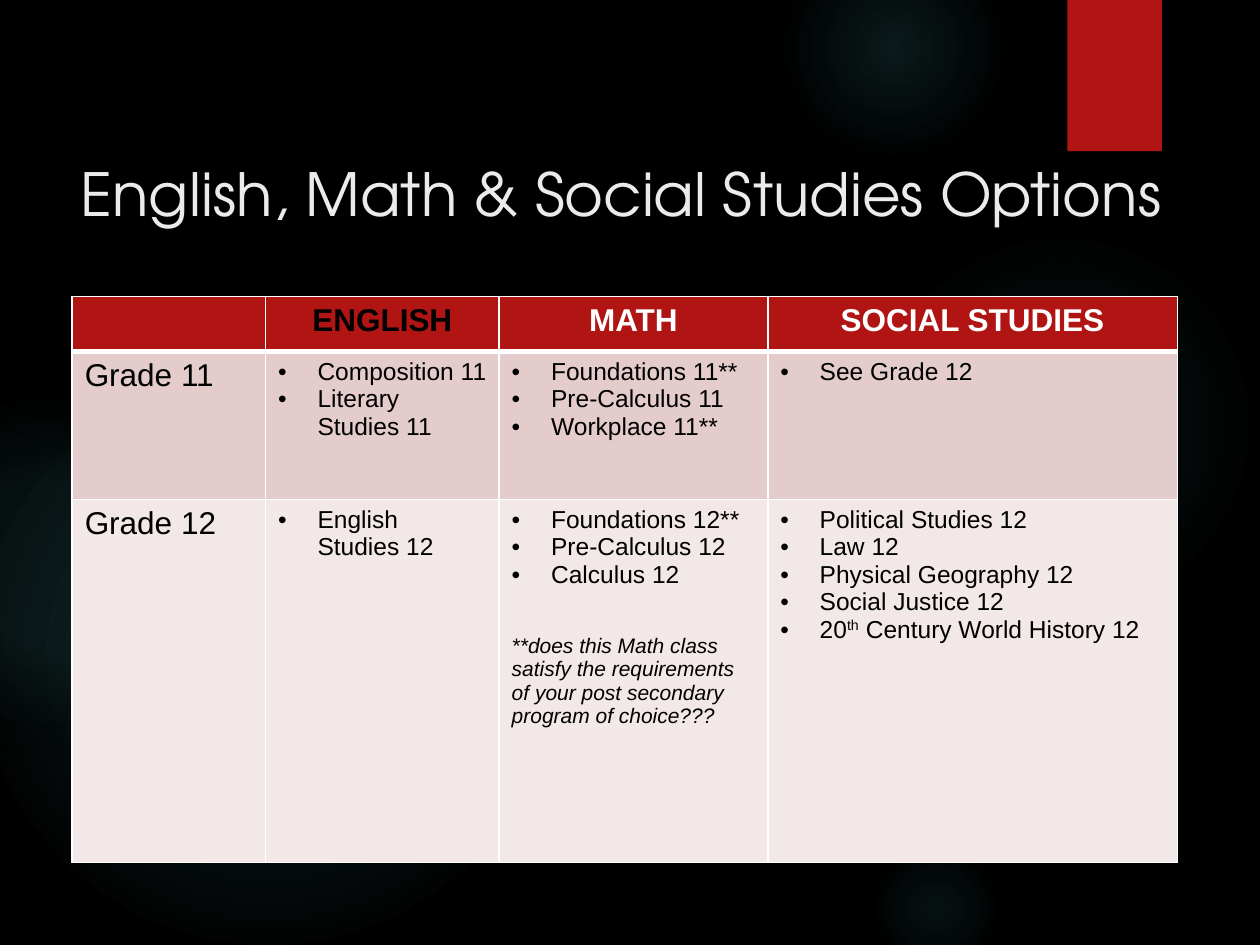
from pptx import Presentation
from pptx.dml.color import RGBColor as RGB
from pptx.enum.shapes import MSO_SHAPE as Kind
from pptx.enum.text import MSO_ANCHOR as Anchor, MSO_AUTO_SIZE as Auto, PP_ALIGN as Align
from pptx.oxml import parse_xml
from pptx.util import Pt
from lxml.etree import SubElement as Sub

BLACK, WHITE = RGB(0, 0, 0), RGB(255, 255, 255)
RED, TEAL = RGB(0xB0, 0x15, 0x13), RGB(0x50, 0xB9, 0xC1)
PALE = RGB(0xEB, 0xEB, 0xEB)
ROSE, BLUSH = RGB(0xE4, 0xCC, 0xCC), RGB(0xF2, 0xE8, 0xE7)
NS = "http://schemas.openxmlformats.org/drawingml/2006/main"
A = "{%s}" % NS

HEAD = dict(size=Pt(18), bold=True, italic=False)
GRADE = dict(size=Pt(18), bold=False, italic=False)
ITEM = dict(size=Pt(14), bold=False, italic=False)
NOTE = dict(size=Pt(12), bold=False, italic=True)

# left, top, diameter, then the stops as (position, opacity) in percent
GLOWS = [
    (496, 132, 222, [(0, 7), (36, 6), (69, 0)]),
    (448, -36, 126, [(0, 14), (36, 7), (73, 0)]),
    (496, 480, 78, [(0, 9), (36, 5), (66, 0)]),
    (-12, 210, 330, [(0, 11), (36, 10), (75, 0)]),
    (-66, 228, 186, [(0, 8), (36, 8), (72, 0)]),
]
COLS = [110.5, 133.5, 153.5, 234]
ROWS = [31.5, 84.5, 207.5]
HEADS = [("ENGLISH", BLACK), ("MATH", WHITE), ("SOCIAL STUDIES", WHITE)]
# Superscripts stand between carets
GRADES = [
    ("Grade 11", ROSE, [
        ["Composition 11", "Literary Studies 11"],
        ["Foundations 11**", "Pre-Calculus 11", "Workplace 11**"],
        ["See Grade 12"]]),
    ("Grade 12", BLUSH, [
        ["English Studies 12"],
        ["Foundations 12**", "Pre-Calculus 12", "Calculus 12"],
        ["Political Studies 12", "Law 12", "Physical Geography 12",
         "Social Justice 12", "20^th^ Century World History 12"]]),
]
ASK = ("**does this Math class satisfy the requirements "
       "of your post secondary program of choice???")


class Deck:
    """Holds the style and the current slide."""
    font = "Arial"
    face = "TeX Gyre Adventor"

    def __init__(self):
        self.prs = Presentation()
        self.prs.slide_width, self.prs.slide_height = Pt(720), Pt(540)
        self.slide = self.prs.slides.add_slide(self.prs.slide_layouts[5])
        back = self.slide.background.fill
        back.solid()
        back.fore_color.rgb = BLACK

    def shape(self, kind, box, fill):
        shp = self.slide.shapes.add_shape(kind, *map(Pt, box))
        shp.shadow.inherit = False
        shp.line.fill.background()
        shp.fill.solid()
        shp.fill.fore_color.rgb = fill
        return shp

    def glow(self, left, top, size, stops):
        """Add a disc that fades out from its centre."""
        shp = self.shape(Kind.OVAL, (left, top, size, size), TEAL)
        marks = "".join(
            f'<a:gs pos="{pos * 1000}"><a:srgbClr val="{TEAL}">'
            f'<a:alpha val="{part * 1000}"/></a:srgbClr></a:gs>'
            for pos, part in stops)
        grad = parse_xml(
            f'<a:gradFill xmlns:a="{NS}"><a:gsLst>{marks}</a:gsLst>'
            '<a:path path="circle"><a:fillToRect l="50000" t="50000" '
            'r="50000" b="50000"/></a:path></a:gradFill>')
        props = shp._element.spPr
        props.replace(props.find(A + "solidFill"), grad)

    def title(self, text, box):
        shp = self.slide.shapes.title
        shp.left, shp.top, shp.width, shp.height = map(Pt, box)
        shp._element.getparent().append(shp._element)
        frame = shp.text_frame
        frame.auto_size, frame.word_wrap = Auto.NONE, True
        frame.vertical_anchor, frame.margin_top = Anchor.TOP, Pt(46)
        par = frame.paragraphs[0]
        par.alignment = Align.LEFT
        self.text(par, text, PALE, dict(size=Pt(34), name=self.face))

    def text(self, par, text, color, style):
        for num, part in enumerate(text.split("^")):
            run = par.add_run()
            run.text = part
            run.font.name = self.font
            run.font.color.rgb = color
            for key, val in style.items():
                setattr(run.font, key, val)
            if num % 2:
                run.font._element.set("baseline", "30000")

    def table(self, left, top, cols, rows):
        frame = self.slide.shapes.add_table(
            len(rows), len(cols), Pt(left), Pt(top), Pt(sum(cols)), Pt(sum(rows)))
        grid = frame.table
        for col, wide in zip(grid.columns, cols):
            col.width = Pt(wide)
        for row, high in zip(grid.rows, rows):
            row.height = Pt(high)
        return grid

    def cell(self, cell, fill, top=1, low=1):
        """Fill a cell and rule it in white; top and low are line widths."""
        cell.fill.solid()
        cell.fill.fore_color.rgb = fill
        props = cell._tc.get_or_add_tcPr()
        for pos, (side, wide) in enumerate(zip("LRTB", (1, 1, top, low))):
            line = Sub(props, A + "ln" + side, w=str(Pt(wide)))
            Sub(Sub(line, A + "solidFill"), A + "srgbClr", val=str(WHITE))
            props.insert(pos, line)

    def items(self, cell, lines):
        frame = cell.text_frame
        for num, text in enumerate(lines):
            par = frame.add_paragraph() if num else frame.paragraphs[0]
            props = par._p.get_or_add_pPr()
            for key, val in dict(marL=Pt(22.5), indent=Pt(-22.5)).items():
                props.set(key, str(val))
            Sub(props, A + "buFont", typeface=self.font)
            Sub(props, A + "buChar", char="•")
            self.text(par, text, BLACK, ITEM)


def main():
    deck = Deck()
    for glow in GLOWS:
        deck.glow(*glow)
    deck.shape(Kind.RECTANGLE, (610, 0, 54, 86.4), RED)
    deck.title("English, Math & Social Studies Options", (39, 44, 657, 68))

    grid = deck.table(41.25, 169.5, COLS, ROWS)
    for col in range(len(COLS)):
        deck.cell(grid.cell(0, col), RED, low=3)
    for col, (text, color) in enumerate(HEADS, 1):
        par = grid.cell(0, col).text_frame.paragraphs[0]
        par.alignment = Align.CENTER
        deck.text(par, text, color, HEAD)

    for row, (name, fill, lists) in enumerate(GRADES, 1):
        for col in range(len(COLS)):
            deck.cell(grid.cell(row, col), fill, top=3 if row == 1 else 1)
        first = grid.cell(row, 0).text_frame.paragraphs[0]
        deck.text(first, name, BLACK, GRADE)
        for col, lines in enumerate(lists, 1):
            deck.items(grid.cell(row, col), lines)

    note = grid.cell(2, 2).text_frame.add_paragraph()
    note.space_before = Pt(26)
    deck.text(note, ASK, BLACK, NOTE)
    deck.prs.save("out.pptx")


if __name__ == "__main__":
    main()
